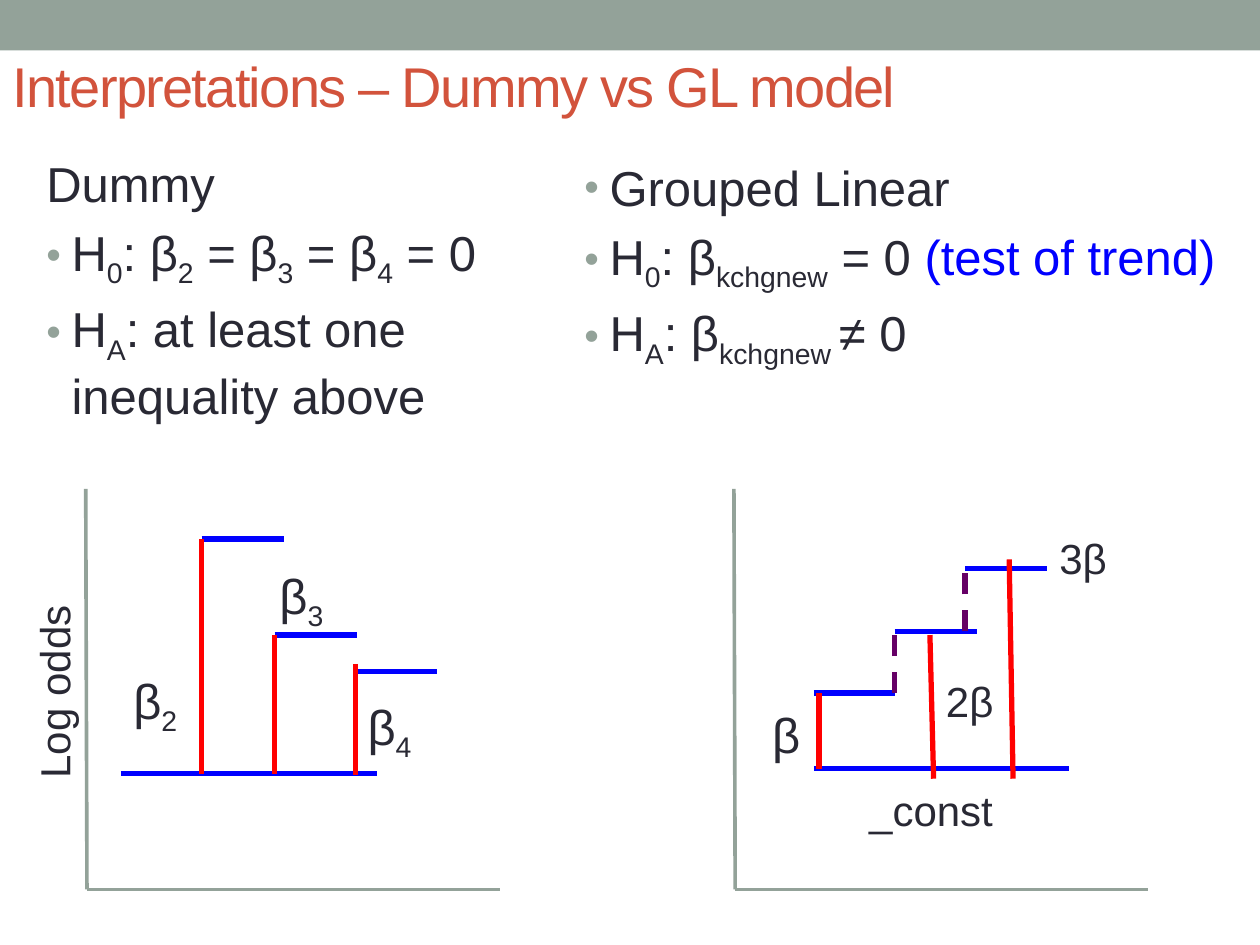
import pptx
import pptx.util
import pptx.dml.color
import pptx.enum.dml
import pptx.enum.shapes
import pptx.enum.text
import lxml.etree
from pptx.oxml.ns import qn

Pt = pptx.util.Pt
RGB = pptx.dml.color.RGBColor.from_string
colors = {"sage": "93A299", "title": "D2533C", "text": "292934",
          "blue": "0000FF", "red": "FF0000", "purple": "660066"}


def add_runs(paragraph, runs, size):
    for text, style in runs:
        run = paragraph.add_run()
        run.text = text
        run.font.name = "Arial"
        run.font.size = Pt(size)
        run.font.color.rgb = RGB(colors["blue" if style == "blue" else "text"])
        if style == "sub":
            run._r.get_or_add_rPr().set("baseline", "-25000")


def add_text_box(left, top, width, height, wrap=True):
    box = slide.shapes.add_textbox(Pt(left), Pt(top), Pt(width), Pt(height))
    box.text_frame.word_wrap = wrap
    return box


presentation = pptx.Presentation()
presentation.slide_width = Pt(720)
presentation.slide_height = Pt(540)
slide = presentation.slides.add_slide(presentation.slide_layouts[5])

band = slide.shapes.add_shape(pptx.enum.shapes.MSO_SHAPE.RECTANGLE, 0, 0, Pt(720), Pt(28.8))
band.shadow.inherit = False
band.fill.solid()
band.fill.fore_color.rgb = RGB(colors["sage"])
band.line.fill.background()

title = slide.shapes.title
title.left, title.top, title.width, title.height = Pt(0), Pt(23.8), Pt(648), Pt(49.7)
title.text_frame.vertical_anchor = pptx.enum.text.MSO_ANCHOR.MIDDLE
paragraph = title.text_frame.paragraphs[0]
paragraph.alignment = pptx.enum.text.PP_ALIGN.LEFT
run = paragraph.add_run()
run.text = "Interpretations – Dummy vs GL model"
run.font.name = "Arial"
run.font.size = Pt(32)
run.font.color.rgb = RGB(colors["title"])
run._r.get_or_add_rPr().set("spc", "-100")

dummy_model = [
    (False, [("Dummy", "")]),
    (True, [("H", ""), ("0", "sub"), (": β", ""), ("2", "sub"), (" = β", ""),
            ("3", "sub"), (" = β", ""), ("4", "sub"), (" = 0", "")]),
    (True, [("H", ""), ("A", "sub"), (": at least one inequality above", "")]),
]
grouped_linear_model = [
    (True, [("Grouped Linear", "")]),
    (True, [("H", ""), ("0", "sub"), (": β", ""), ("kchgnew", "sub"),
            (" = 0 ", ""), ("(test of trend)", "blue")]),
    (True, [("H", ""), ("A", "sub"), (": β", ""), ("kchgnew ", "sub"), ("≠ 0", "")]),
]
for position, hypotheses in [((19.4, 84.2, 318.2, 439.2), dummy_model),
                             ((326.9, 86.4, 393.1, 436.3), grouped_linear_model)]:
    frame = add_text_box(*position).text_frame
    for index, (bulleted, runs) in enumerate(hypotheses):
        paragraph = frame.add_paragraph() if index else frame.paragraphs[0]
        paragraph.space_before = Pt(5.6)
        add_runs(paragraph, runs, 28)
        if bulleted:
            properties = paragraph._p.get_or_add_pPr()
            properties.set("marL", str(Pt(14.4)))
            properties.set("indent", str(-Pt(14.4)))
            bullet_color = lxml.etree.SubElement(properties, qn("a:buClr"))
            lxml.etree.SubElement(bullet_color, qn("a:srgbClr")).set("val", colors["sage"])
            lxml.etree.SubElement(properties, qn("a:buSzPct")).set("val", "85000")
            lxml.etree.SubElement(properties, qn("a:buFont")).set("typeface", "Arial")
            lxml.etree.SubElement(properties, qn("a:buChar")).set("char", "•")

axes = []
for offset in (0, 370.4):
    axes += [(49 + offset, 279.4, 49.7 + offset, 508.3),
             (49.7 + offset, 508.3, 285.8 + offset, 508.3)]
levels = [
    (69.1, 442.1, 215.3, 442.1), (115.2, 308, 162, 308),
    (157, 362.9, 203.8, 362.9), (203.8, 383.8, 249.8, 383.8),
    (465.1, 439.2, 610.6, 439.2), (465.1, 396, 511.2, 396),
    (511.2, 360.7, 558, 360.7), (551.5, 324.7, 598.3, 324.7),
]
effects = [
    (115.2, 308, 115.2, 442.1), (157, 362.9, 157, 442.1), (203, 379.4, 203, 442.8),
    (468, 396, 468, 439.2), (531.4, 362.9, 533.5, 445), (576.7, 319.7, 578.9, 445),
]
steps = [(511.2, 396, 511.2, 362.9), (551.5, 360.7, 551.5, 324.7)]
for lines, color, width in [(axes, "sage", 2.08), (levels, "blue", 3),
                            (effects, "red", 3), (steps, "purple", 3)]:
    for ends in lines:
        connector = slide.shapes.add_connector(
            pptx.enum.shapes.MSO_CONNECTOR.STRAIGHT, *[Pt(value) for value in ends])
        connector.line.color.rgb = RGB(colors[color])
        connector.line.width = Pt(width)
        if color == "purple":
            connector.line.dash_style = pptx.enum.dml.MSO_LINE.DASH
        lxml.etree.SubElement(connector._element.spPr, qn("a:effectLst"))

labels = [
    ((69.1, 379.4, 62.6, 41), "β", "2", 28, True, 0),
    ((152.6, 319.7, 62.6, 41), "β", "3", 28, True, 0),
    ((203, 394.6, 62.6, 41), "β", "4", 28, True, 0),
    ((434.2, 398.9, 31, 41), "β", "", 28, False, 0),
    ((533.5, 382.3, 52.6, 36), "2β", "", 24, True, 0),
    ((598.3, 301, 52.6, 36), "3β", "", 24, True, 0),
    ((489.6, 445, 87.1, 36), "_const", "", 24, False, 0),
    ((-26.6, 376.6, 114.5, 36), "Log odds", "", 24, False, 270),
]
for position, text, subscript, size, wrap, rotation in labels:
    box = add_text_box(*position, wrap)
    box.rotation = rotation
    runs = [(text, "")]
    if subscript:
        runs.append((subscript, "sub"))
    add_runs(box.text_frame.paragraphs[0], runs, size)

presentation.save("out.pptx")
